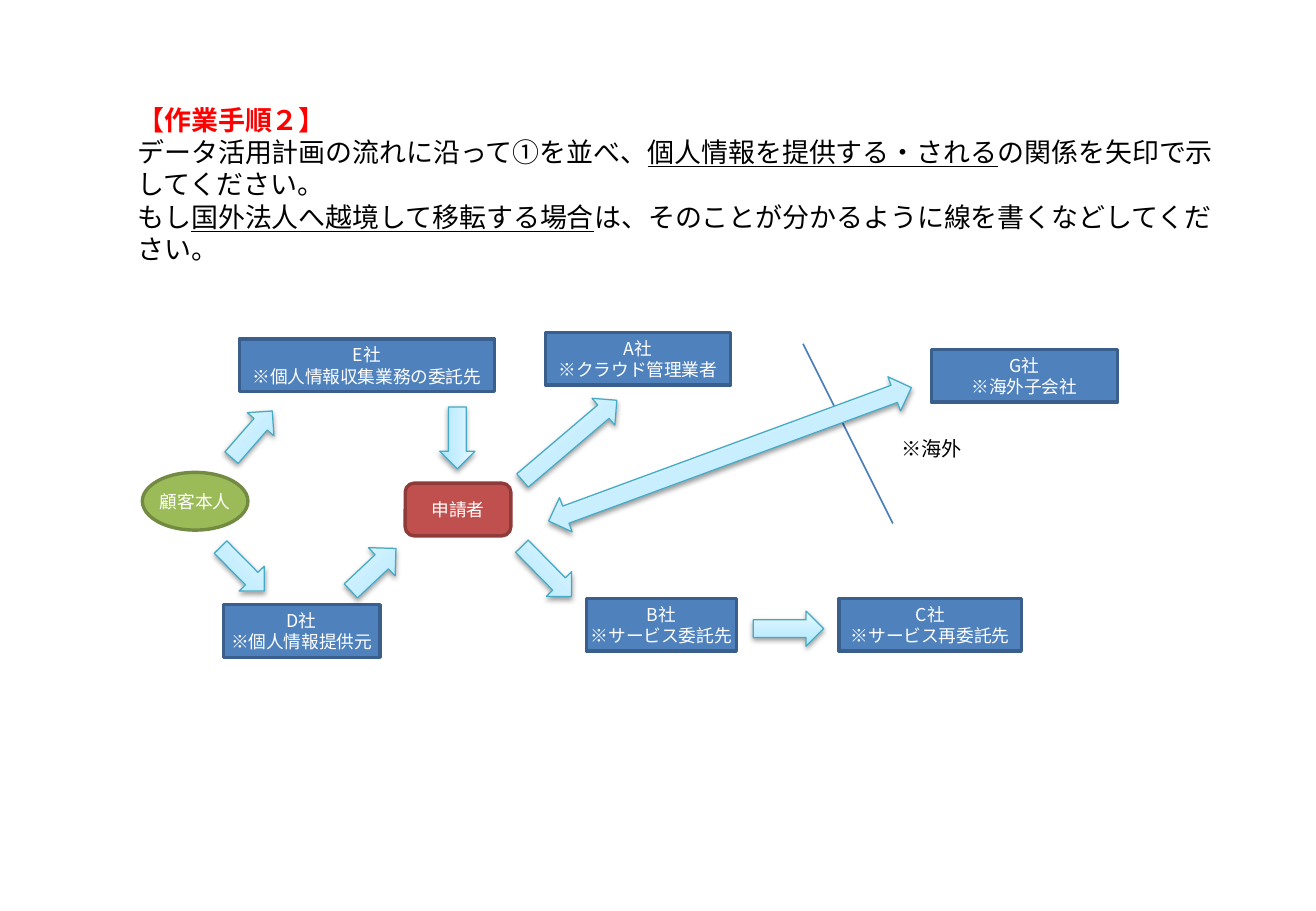
from lxml import etree
from pptx import Presentation
from pptx.dml.color import RGBColor
from pptx.enum.shapes import MSO_CONNECTOR, MSO_SHAPE as SHAPE
from pptx.enum.text import MSO_ANCHOR, PP_ALIGN
from pptx.util import Pt

FONT = "Noto Sans CJK JP"
NS = "http://schemas.openxmlformats.org/drawingml/2006/main"
GRADIENT = f"""<a:gradFill xmlns:a="{NS}" rotWithShape="1"><a:gsLst>
<a:gs pos="0"><a:srgbClr val="A7E6FF"/></a:gs>
<a:gs pos="35000"><a:srgbClr val="C1EDFF"/></a:gs>
<a:gs pos="100000"><a:srgbClr val="E7F8FF"/></a:gs>
</a:gsLst><a:lin ang="16200000" scaled="1"/></a:gradFill>"""
SHADOW = f"""<a:effectLst xmlns:a="{NS}">
<a:outerShdw blurRad="40000" dist="20000" dir="5400000" rotWithShape="0">
<a:srgbClr val="000000"><a:alpha val="38000"/></a:srgbClr>
</a:outerShdw></a:effectLst>"""


def rgb(color):
    return RGBColor.from_string(color)


def add_run(p, text, size, color):
    r = p.add_run()
    r.text = text
    r.font.name = FONT
    r.font.size = Pt(size)
    r.font.color.rgb = rgb(color)
    return r


prs = Presentation()
prs.slide_width, prs.slide_height = Pt(780), Pt(540)
s = prs.slides.add_slide(prs.slide_layouts[6])

# Text: left, top, width, height, wrap, size, paragraphs of (text, style)
texts = [
    (81.5, 61.2, 648, 58.3, True, 16, [
        [("【作業手順２】", "title")],
        [("データ活用計画の流れに沿って①を並べ、", ""),
         ("個人情報を提供する・される", "underline"),
         ("の関係を矢印で示してください。", "")],
        [("もし", ""), ("国外法人へ越境して移転する場合", "underline"),
         ("は、そのことが分かるように線を書くなどしてください。", "")],
    ]),
    (534.2, 258.5, 36, 14.4, False, 12, [[("※海外", "")]]),
]
for x, y, w, h, wrap, size, paragraphs in texts:
    tf = s.shapes.add_textbox(Pt(x), Pt(y), Pt(w), Pt(h)).text_frame
    tf.word_wrap = wrap
    tf.margin_left = tf.margin_right = tf.margin_top = tf.margin_bottom = 0
    for i, runs in enumerate(paragraphs):
        p = tf.add_paragraph() if i else tf.paragraphs[0]
        for text, style in runs:
            r = add_run(p, text, size, "FF0000" if style == "title" else "000000")
            r.font.bold = style == "title"
            r.font.underline = style == "underline"

# Parties: shape, left, top, width, height, fill, line, text lines
BLUE = ("4F81BD", "3A5F8C")
parties = [
    (SHAPE.OVAL, 84.4, 280, 62.6, 34.2, "9BBB59", "738A42", ["顧客本人"]),
    (SHAPE.ROUNDED_RECTANGLE, 240.2, 286.4, 62.6, 31.2, "C0504D", "8E3B39", ["申請者"]),
    (SHAPE.RECTANGLE, 347.6, 354.8, 88.8, 31.2, *BLUE, ["B社", "※サービス委託先"]),
    (SHAPE.RECTANGLE, 323.4, 197, 109.6, 31.2, *BLUE, ["A社", "※クラウド管理業者"]),
    (SHAPE.RECTANGLE, 497.4, 354.8, 108, 31.2, *BLUE, ["C社", "※サービス再委託先"]),
    (SHAPE.RECTANGLE, 132.4, 358.4, 92.8, 31.2, *BLUE, ["D社", "※個人情報提供元"]),
    (SHAPE.RECTANGLE, 141.8, 201, 151.4, 31.2, *BLUE, ["E社", "※個人情報収集業務の委託先"]),
    (SHAPE.RECTANGLE, 552, 207.2, 110.4, 31.2, *BLUE, ["G社", "※海外子会社"]),
]
for kind, x, y, w, h, fill, line, lines in parties:
    sp = s.shapes.add_shape(kind, Pt(x), Pt(y), Pt(w), Pt(h))
    sp.shadow.inherit = False
    sp.fill.solid()
    sp.fill.fore_color.rgb = rgb(fill)
    sp.line.color.rgb = rgb(line)
    sp.line.width = Pt(2)
    tf = sp.text_frame
    tf.word_wrap = False
    tf.vertical_anchor = MSO_ANCHOR.MIDDLE
    for i, text in enumerate(lines):
        p = tf.add_paragraph() if i else tf.paragraphs[0]
        p.alignment = PP_ALIGN.CENTER
        add_run(p, text, 10.5, "FFFFFF")

# Border between home and abroad
border = s.shapes.add_connector(MSO_CONNECTOR.STRAIGHT, Pt(476), Pt(203.8), Pt(529.2), Pt(310.3))
border.line.color.rgb = rgb("4B7EBC")
border.line.width = Pt(1)
etree.SubElement(border._element.spPr, f"{{{NS}}}effectLst")

# Flows of personal data: shape, left, top, width, height, rotation
flows = [
    (SHAPE.RIGHT_ARROW, 131, 247, 36.7, 20.9, 311.1),
    (SHAPE.RIGHT_ARROW, 252.7, 249.1, 36.7, 20.9, 90),
    (SHAPE.RIGHT_ARROW, 203, 326.2, 36.7, 23, 316.7),
    (SHAPE.RIGHT_ARROW, 301, 250.6, 73.4, 20.9, 319.6),
    (SHAPE.RIGHT_ARROW, 125.3, 326.9, 36.7, 20.9, 45.3),
    (SHAPE.RIGHT_ARROW, 303.1, 328.3, 41.8, 20.9, 45.5),
    (SHAPE.RIGHT_ARROW, 446.4, 362.2, 41.8, 20.9, 0),
    (SHAPE.LEFT_RIGHT_ARROW, 318.2, 258.5, 229, 21.6, 339.8),
]
for kind, x, y, w, h, angle in flows:
    sp = s.shapes.add_shape(kind, Pt(x), Pt(y), Pt(w), Pt(h))
    sp.rotation = angle
    sp.line.color.rgb = rgb("46AAC5")
    sp.line.width = Pt(0.75)
    sp._element.spPr.find(f"{{{NS}}}prstGeom").addnext(etree.fromstring(GRADIENT))
    sp._element.spPr.append(etree.fromstring(SHADOW))

prs.save("out.pptx")
